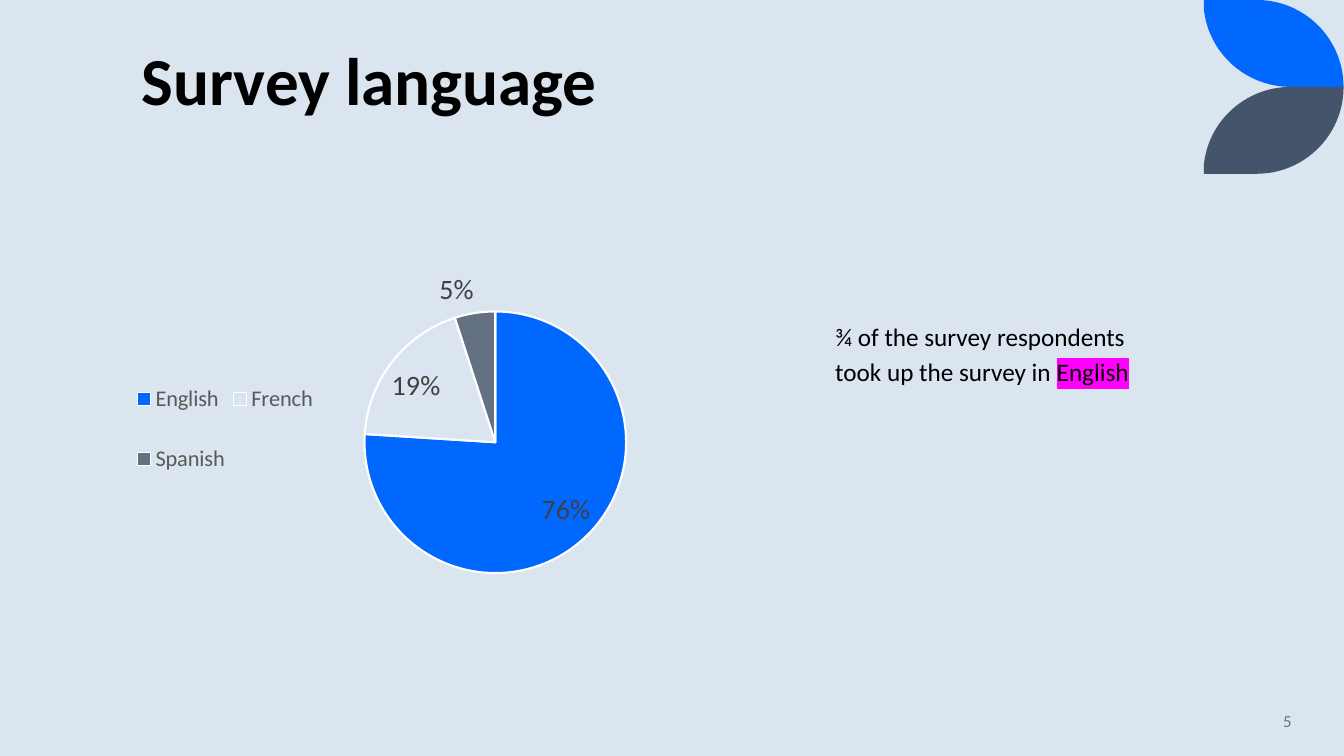
import lxml.etree
import pptx
import pptx.chart.data
import pptx.dml.color
import pptx.enum.chart
import pptx.enum.text
import pptx.oxml
import pptx.oxml.ns
import pptx.util

Cm, Pt, qn = pptx.util.Cm, pptx.util.Pt, pptx.oxml.ns.qn
ALIGN, ANCHOR = pptx.enum.text.PP_ALIGN, pptx.enum.text.MSO_ANCHOR
BLUE, PALE, GREY, SLATE = "0068FF", "DAE5EF", "637183", "44546A"
FONT = "Calibri"
LEAF_LEFT, LEAF_HEIGHT = 30.34, 2.19
LEAF_CORNERS = [(0, 0), (1.33, 0), (3.52, 2.19), (2.19, 2.19), (0, 0.23)]
LEAF_CURVES = {1: [(2.54, 0), (3.52, 0.98)], 3: [(1.05, 2.19), (0.11, 1.33)]}
SHARES = {"English": (0.76, BLUE), "French": (0.19, PALE), "Spanish": (0.05, GREY)}


def color(value):
    return pptx.dml.color.RGBColor.from_string(value)


def fill_solid(fill, value):
    fill.solid()
    fill.fore_color.rgb = color(value)


def apply_format(target, values):
    for name, value in values.items():
        setattr(target, name, value)


def format_font(font, size, value, bold=False):
    apply_format(font, {"name": FONT, "size": Pt(size), "bold": bold})
    font.color.rgb = color(value)


def place(shape, left, top, width, height):
    box = {"left": left, "top": top, "width": width, "height": height}
    apply_format(shape, {name: Cm(value) for name, value in box.items()})


def highlight(run, value):
    mark = pptx.oxml.parse_xml(
        f'<a:highlight {pptx.oxml.ns.nsdecls("a")}><a:srgbClr val="{value}"/></a:highlight>')
    run.font._element.find(qn("a:solidFill")).addnext(mark)


def bend(segment, controls):
    """Turn a straight outline segment into a cubic curve."""
    curve = lxml.etree.Element(qn("a:cubicBezTo"))
    for x, y in controls:
        point = lxml.etree.SubElement(curve, qn("a:pt"))
        point.set("x", str(x))
        point.set("y", str(y))
    curve.append(segment[0])
    segment.getparent().replace(segment, curve)


def add_leaf(slide, value, mirrored=False):
    def position(point):
        x, y = point
        return Cm(LEAF_LEFT + x), Cm(2 * LEAF_HEIGHT - y if mirrored else y)

    corners = [position(corner) for corner in LEAF_CORNERS]
    builder = slide.shapes.build_freeform(*corners[0])
    builder.add_line_segments(corners[1:], close=True)
    leaf = builder.convert_to_shape()
    segments = list(leaf._element.iter(qn("a:lnTo")))
    for index, controls in LEAF_CURVES.items():
        points = [position(control) for control in controls]
        bend(segments[index], [(x - leaf.left, y - leaf.top) for x, y in points])
    leaf.shadow.inherit = False
    fill_solid(leaf.fill, value)
    leaf.line.fill.background()


def add_title(slide, text):
    title = slide.shapes.title
    place(title, 3.32, -1.22, 27.15, 4.37)
    apply_format(title.text_frame, {
        "text": text, "vertical_anchor": ANCHOR.BOTTOM,
        "auto_size": pptx.enum.text.MSO_AUTO_SIZE.NONE})
    paragraph = title.text_frame.paragraphs[0]
    apply_format(paragraph, {"alignment": ALIGN.LEFT, "line_spacing": 0.9})
    format_font(paragraph.runs[0].font, 48, "000000", True)


def add_text(slide, box, texts, size, value, anchor, paragraph_format):
    """Add a one-paragraph text box and return its runs."""
    frame = slide.shapes.add_textbox(*map(Cm, box)).text_frame
    apply_format(frame, {"word_wrap": True, "vertical_anchor": anchor})
    paragraph = frame.paragraphs[0]
    apply_format(paragraph, paragraph_format)
    for text in texts:
        run = paragraph.add_run()
        run.text = text
        format_font(run.font, size, value)
    return paragraph.runs


def set_layout(element, index, box, inner=False):
    """Fix a chart part at fractions (x, y, w, h) of the chart."""
    for old in element.findall(qn("c:layout")):
        element.remove(old)
    layout = lxml.etree.Element(qn("c:layout"))
    manual = lxml.etree.SubElement(layout, qn("c:manualLayout"))
    values = {"layoutTarget": "inner"} if inner else {}
    values.update({"xMode": "edge", "yMode": "edge"}, **dict(zip("xywh", box)))
    for name, value in values.items():
        lxml.etree.SubElement(manual, qn(f"c:{name}")).set("val", str(value))
    element.insert(index, layout)


def add_pie(slide):
    data = pptx.chart.data.CategoryChartData(number_format="0%")
    data.categories = list(SHARES)
    data.add_series("Series 1", [share for share, _ in SHARES.values()])
    chart = slide.shapes.add_chart(
        pptx.enum.chart.XL_CHART_TYPE.PIE,
        Cm(3.07), Cm(6.53), Cm(17.93), Cm(9.42), data).chart
    apply_format(chart, {"has_title": False, "has_legend": True})
    format_font(chart.font, 10, "000000")
    apply_format(chart.legend, {
        "position": pptx.enum.chart.XL_LEGEND_POSITION.BOTTOM, "include_in_layout": False})
    format_font(chart.legend.font, 16, "595959")
    set_layout(chart.legend._element, 1, (0.01, 0.25, 0.27, 0.41))
    plot = chart.plots[0]
    apply_format(plot, {"vary_by_categories": True, "has_data_labels": True})
    set_layout(plot._element.getparent(), 0, (0.34, 0.14, 0.37, 0.7), inner=True)
    apply_format(plot.data_labels, {
        "show_value": True, "show_percentage": False, "number_format": "0%",
        "number_format_is_linked": False,
        "position": pptx.enum.chart.XL_LABEL_POSITION.BEST_FIT})
    format_font(plot.data_labels.font, 20, "404040")
    for index, (_, value) in enumerate(SHARES.values()):
        slice_format = plot.series[0].points[index].format
        fill_solid(slice_format.fill, value)
        slice_format.line.color.rgb = color("FFFFFF")
        slice_format.line.width = Pt(1.5)


def main():
    presentation = pptx.Presentation()
    apply_format(presentation, {"slide_width": Cm(33.87), "slide_height": Cm(19.05)})
    slide = presentation.slides.add_slide(presentation.slide_layouts[5])
    fill_solid(slide.background.fill, PALE)
    add_leaf(slide, BLUE)
    add_leaf(slide, SLATE, mirrored=True)
    add_title(slide, "Survey language")
    add_text(slide, (28.2, 17.65, 4.6, 1.02), ["5"], 12, GREY,
             ANCHOR.MIDDLE, {"alignment": ALIGN.RIGHT})
    add_pie(slide)
    runs = add_text(slide, (20.8, 7.86, 8.69, 1.98),
                    ["¾ of the survey respondents took up the survey in ", "English"],
                    18, "000000", ANCHOR.TOP, {"line_spacing": Pt(25)})
    highlight(runs[-1], "FF00FF")
    presentation.save("out.pptx")


if __name__ == "__main__":
    main()
